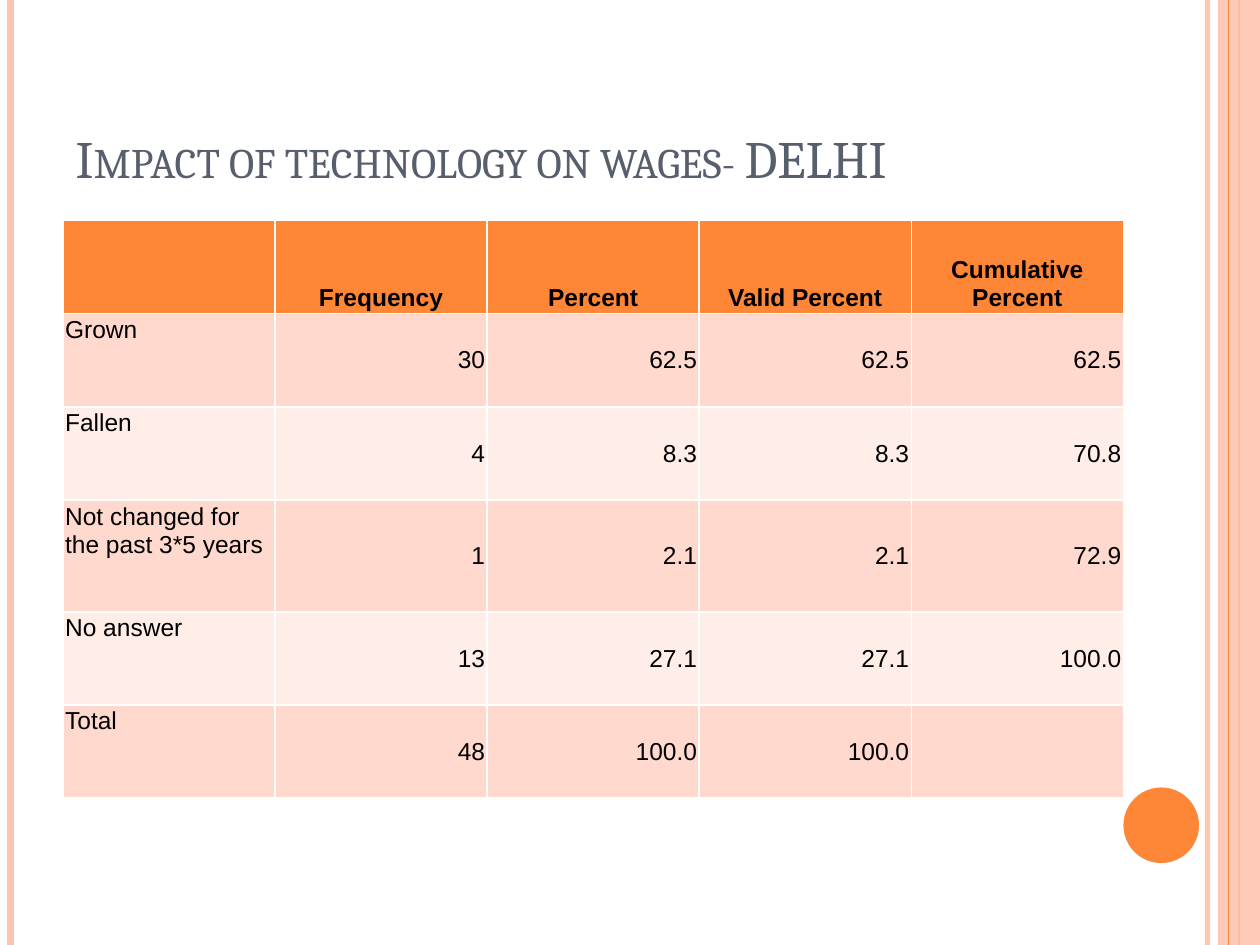
from pptx import Presentation
from pptx.dml.color import RGBColor
from pptx.enum import shapes, text
from pptx.oxml import ns
from pptx.util import Pt
from lxml import etree

ORANGE = RGBColor(0xFE, 0x86, 0x37)
PEACH = RGBColor(0xFE, 0xC3, 0xAE)
SLATE = RGBColor(0x57, 0x5F, 0x6D)
BLACK = RGBColor(0, 0, 0)
BAND_DARK = RGBColor(0xFF, 0xD9, 0xCE)
BAND_LIGHT = RGBColor(0xFF, 0xED, 0xE8)

WIDTH, HEIGHT = 720, 540
COLUMN_WIDTH = 121.2
ROW_HEIGHTS = [53.1, 53.4, 53.4, 63.8, 53.3, 53]
CELL_INSET = 1.2

WAGES = [
    ["", "Frequency", "Percent", "Valid Percent", "Cumulative Percent"],
    ["Grown", "30", "62.5", "62.5", "62.5"],
    ["Fallen", "4", "8.3", "8.3", "70.8"],
    ["Not changed for the past 3*5 years", "1", "2.1", "2.1", "72.9"],
    ["No answer", "13", "27.1", "27.1", "100.0"],
    ["Total", "48", "100.0", "100.0", ""],
]


def write(frame, words, *, size, font, color, align, bold=False, spacing=None, small_caps=False):
    """Fill a text frame with one formatted paragraph."""
    paragraph = frame.paragraphs[0]
    paragraph.alignment = align
    if spacing:
        paragraph.line_spacing = Pt(spacing)
    run = paragraph.add_run()
    run.text = words
    run.font.size = Pt(size)
    run.font.name = font
    run.font.bold = bold
    run.font.color.rgb = color
    if small_caps:
        run._r.get_or_add_rPr().set("cap", "small")


def set_opacity(shape, percent):
    """Make the colours of a shape partly transparent."""
    for color in shape._element.spPr.iter(ns.qn("a:srgbClr")):
        etree.SubElement(color, ns.qn("a:alpha")).set("val", str(percent * 1000))


def add_stripe(slide, x, weight, color, opacity=100):
    """Draw a vertical line over the full slide height."""
    stripe = slide.shapes.add_connector(
        shapes.MSO_CONNECTOR.STRAIGHT, Pt(x), Pt(0), Pt(x), Pt(HEIGHT))
    stripe.line.color.rgb = color
    stripe.line.width = Pt(weight)
    etree.SubElement(stripe._element.spPr, ns.qn("a:effectLst"))
    if opacity < 100:
        set_opacity(stripe, opacity)


def add_block(slide, kind, left, top, width, height, color):
    """Draw a filled shape without outline."""
    block = slide.shapes.add_shape(kind, Pt(left), Pt(top), Pt(width), Pt(height))
    block.shadow.inherit = False
    block.fill.solid()
    block.fill.fore_color.rgb = color
    block.line.fill.background()
    return block


def add_decoration(slide):
    """Draw the edge stripes and the corner disc."""
    add_stripe(slide, 690, 3, PEACH, opacity=93)
    add_stripe(slide, 6, 4.5, PEACH)
    add_stripe(slide, 708, 1.5, ORANGE)
    side_band = add_block(slide, shapes.MSO_SHAPE.RECTANGLE, 696, 0, 24, HEIGHT, PEACH)
    set_opacity(side_band, 87)
    add_stripe(slide, 702, 0.75, ORANGE)
    add_block(slide, shapes.MSO_SHAPE.OVAL, 642, 450, 43.2, 43.2, ORANGE)


def place_title(slide, words):
    """Position and fill the title placeholder."""
    title = slide.shapes.title
    title.left, title.top, title.width, title.height = Pt(36), Pt(21.6), Pt(588), Pt(90)
    title.text_frame.vertical_anchor = text.MSO_ANCHOR.BOTTOM
    write(title.text_frame, words, size=30, font="Cambria", color=SLATE,
          align=text.PP_ALIGN.LEFT, small_caps=True)


def cell_format(row, column):
    """Return fill, anchor and alignment for a table position."""
    if row == 0:
        return ORANGE, text.MSO_ANCHOR.BOTTOM, text.PP_ALIGN.CENTER
    band = BAND_DARK if row % 2 else BAND_LIGHT
    if column == 0:
        return band, text.MSO_ANCHOR.TOP, text.PP_ALIGN.LEFT
    return band, text.MSO_ANCHOR.MIDDLE, text.PP_ALIGN.RIGHT


def add_wage_table(slide):
    """Build the table of wage answers."""
    columns = len(WAGES[0])
    table = slide.shapes.add_table(
        len(WAGES), columns, Pt(36), Pt(126),
        Pt(COLUMN_WIDTH * columns), Pt(sum(ROW_HEIGHTS))).table
    for column in table.columns:
        column.width = Pt(COLUMN_WIDTH)
    for row, (height, values) in enumerate(zip(ROW_HEIGHTS, WAGES)):
        table.rows[row].height = Pt(height)
        for column, value in enumerate(values):
            cell = table.cell(row, column)
            fill, cell.vertical_anchor, align = cell_format(row, column)
            cell.fill.solid()
            cell.fill.fore_color.rgb = fill
            cell.margin_left = cell.margin_right = Pt(CELL_INSET)
            cell.margin_top = cell.margin_bottom = Pt(CELL_INSET)
            if value:
                write(cell.text_frame, value, size=14, font="Arial", color=BLACK,
                      align=align, bold=row == 0, spacing=16)


def main():
    """Build and save the slide."""
    deck = Presentation()
    deck.slide_width, deck.slide_height = Pt(WIDTH), Pt(HEIGHT)
    slide = deck.slides.add_slide(deck.slide_layouts.get_by_name("Title Only"))
    add_decoration(slide)
    place_title(slide, "Impact of technology on wages- DELHI")
    add_wage_table(slide)
    deck.save("out.pptx")


if __name__ == "__main__":
    main()
